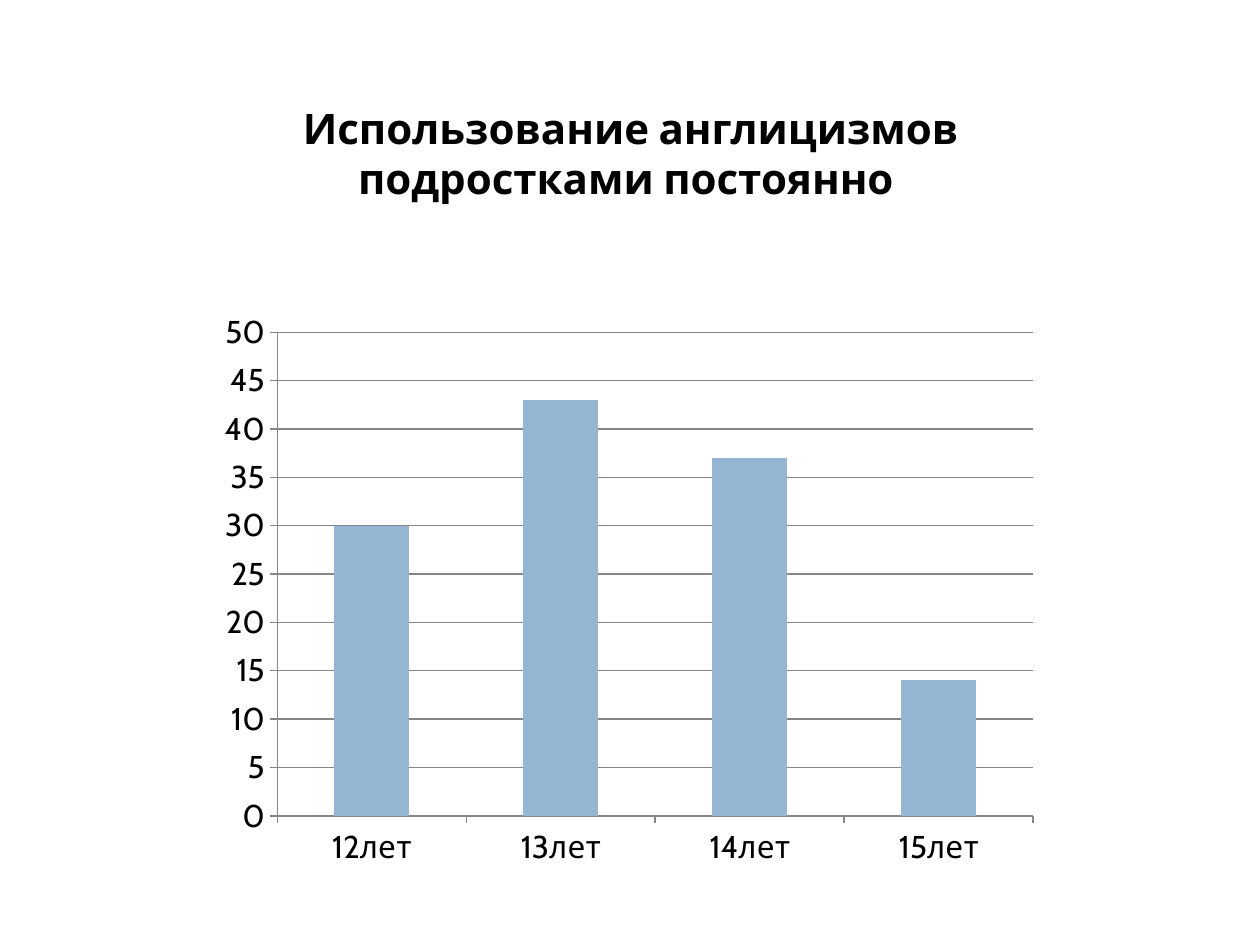
import pptx
import pptx.chart.data
import pptx.dml.color
import pptx.enum.chart
import pptx.enum.text
import pptx.oxml
import pptx.oxml.ns
import pptx.util

Pt = pptx.util.Pt

TITLE = "Использование англицизмов подростками постоянно "
USAGE = {"12лет": 30, "13лет": 43, "14лет": 37, "15лет": 14}
FONT = "Cabin"
BLACK, BAR, GRID = "000000", "94B6D2", "868686"
TITLE_BOX = (150.5, 54.7, 419.8, 65.5)
CHART_BOX = (120, 173.5, 480, 329)
PLOT_LAYOUT = {"x": 0.08, "y": 0.05, "w": 0.9, "h": 0.84}


def rgb(value):
    return pptx.dml.color.RGBColor.from_string(value)


def style_font(font, size, bold):
    font.name = FONT
    font.size = Pt(size)
    font.bold = bold
    font.color.rgb = rgb(BLACK)


def style_line(line):
    line.color.rgb = rgb(GRID)
    line.width = Pt(0.75)


def add_title(slide):
    sp = slide.shapes.title
    sp.left, sp.top, sp.width, sp.height = map(Pt, TITLE_BOX)
    tf = sp.text_frame
    tf.word_wrap = True
    tf.auto_size = pptx.enum.text.MSO_AUTO_SIZE.NONE
    tf.vertical_anchor = pptx.enum.text.MSO_ANCHOR.TOP
    p = tf.paragraphs[0]
    p.alignment = pptx.enum.text.PP_ALIGN.CENTER
    r = p.add_run()
    r.text = TITLE
    style_font(r.font, 24, True)


def set_plot_layout(chart):
    plot_area = chart.element.find(".//" + pptx.oxml.ns.qn("c:plotArea"))
    for old in plot_area.findall(pptx.oxml.ns.qn("c:layout")):
        plot_area.remove(old)
    modes = '<c:xMode val="edge"/><c:yMode val="edge"/>'
    sizes = "".join(f'<c:{key} val="{val}"/>' for key, val in PLOT_LAYOUT.items())
    plot_area.insert(0, pptx.oxml.parse_xml(
        f'<c:layout {pptx.oxml.ns.nsdecls("c")}><c:manualLayout>'
        f'<c:layoutTarget val="inner"/>{modes}{sizes}'
        '</c:manualLayout></c:layout>'))


def add_usage_chart(slide):
    data = pptx.chart.data.CategoryChartData()
    data.categories = list(USAGE)
    data.add_series("Series 1", list(USAGE.values()))
    chart = slide.shapes.add_chart(
        pptx.enum.chart.XL_CHART_TYPE.COLUMN_CLUSTERED,
        *map(Pt, CHART_BOX), data).chart
    chart.has_legend = False
    chart.has_title = False
    style_font(chart.font, 18, False)

    plot = chart.plots[0]
    plot.gap_width = 150
    plot.vary_by_categories = False
    fill = plot.series[0].format.fill
    fill.solid()
    fill.fore_color.rgb = rgb(BAR)

    for axis in (chart.category_axis, chart.value_axis):
        axis.major_tick_mark = pptx.enum.chart.XL_TICK_MARK.OUTSIDE
        axis.minor_tick_mark = pptx.enum.chart.XL_TICK_MARK.NONE
        style_line(axis.format.line)
    value_axis = chart.value_axis
    value_axis.minimum_scale, value_axis.maximum_scale = 0, 50
    value_axis.major_unit = 5
    value_axis.has_major_gridlines = True
    style_line(value_axis.major_gridlines.format.line)
    set_plot_layout(chart)


def main():
    prs = pptx.Presentation()
    prs.slide_width, prs.slide_height = Pt(720), Pt(540)
    slide = prs.slides.add_slide(prs.slide_layouts.get_by_name("Title Only"))
    add_usage_chart(slide)
    add_title(slide)
    prs.save("out.pptx")


if __name__ == "__main__":
    main()
